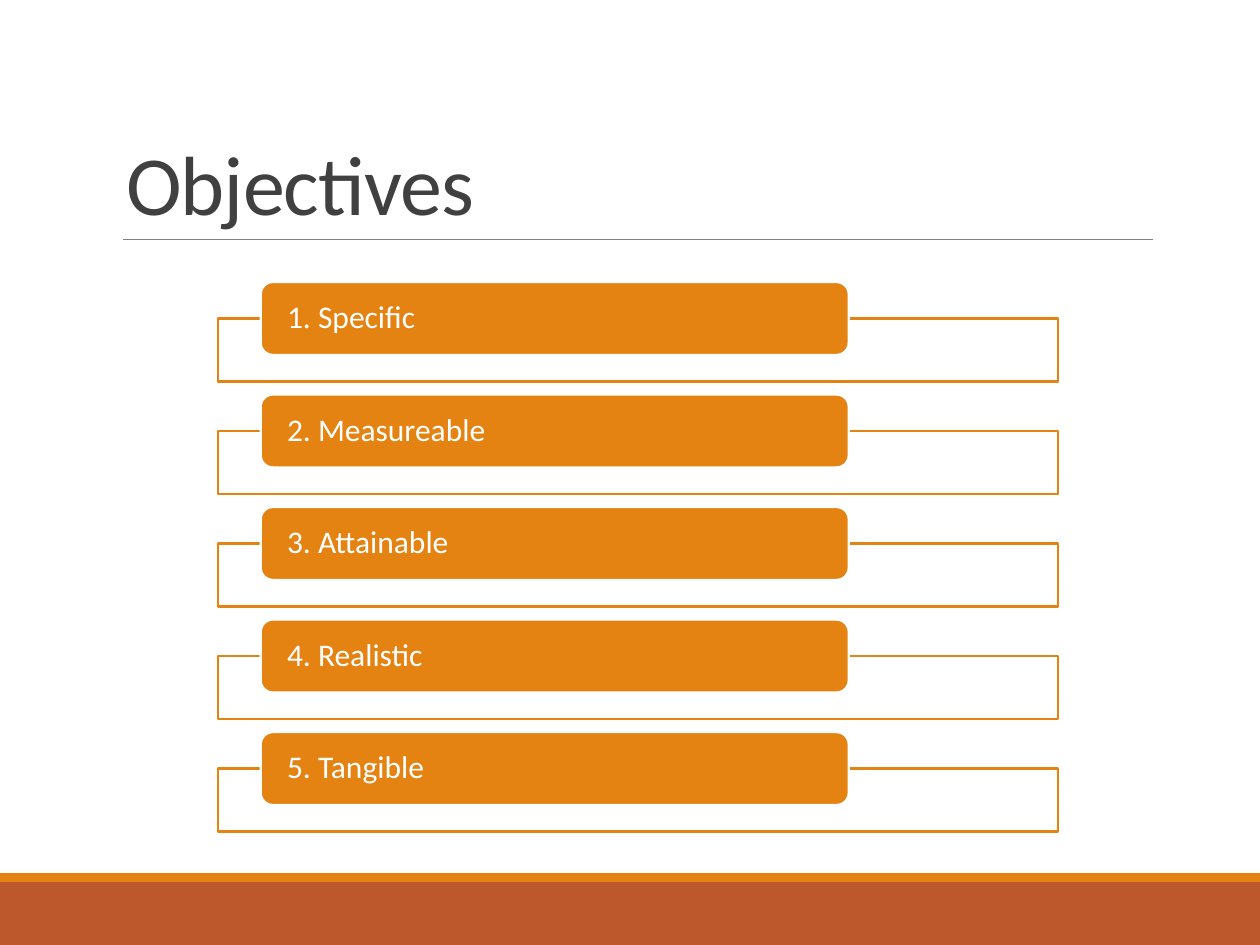
from dataclasses import dataclass

from lxml.etree import SubElement
from pptx import Presentation
from pptx.dml.color import RGBColor
from pptx.enum.shapes import MSO_CONNECTOR, MSO_SHAPE
from pptx.enum.text import MSO_ANCHOR, MSO_AUTO_SIZE, PP_ALIGN
from pptx.oxml.ns import qn
from pptx.shapes.autoshape import Shape
from pptx.slide import Slide
from pptx.text.text import TextFrame
from pptx.util import Pt

FONT = "Calibri"
ORANGE, RUST, WHITE = "E48312", "BD582C", "FFFFFF"
DARK_GRAY, RULE_GRAY = "404040", "808080"
ROW_PITCH = 64.3


@dataclass(frozen=True)
class Box:
    left: float
    top: float
    width: float
    height: float

    def moved_down(self, distance: float) -> "Box":
        return Box(self.left, self.top + distance, self.width, self.height)

    def lengths(self) -> tuple[Pt, Pt, Pt, Pt]:
        return Pt(self.left), Pt(self.top), Pt(self.width), Pt(self.height)


TITLE = Box(64.8, 22.6, 594, 114.2)
FRAME = Box(124.7, 182, 480, 36)
LABEL = Box(149, 161.2, 336, 41.6)
BANDS = ((Box(0, 504, 720, 36), RUST), (Box(0, 499, 720, 5), ORANGE))
OBJECTIVES = ("Specific", "Measureable", "Attainable", "Realistic", "Tangible")


def rgb(color: str) -> RGBColor:
    return RGBColor.from_string(color)


def add_block(slide: Slide, preset: MSO_SHAPE, box: Box, fill: str,
              outline: str | None = None) -> Shape:
    block = slide.shapes.add_shape(preset, *box.lengths())
    block.shadow.inherit = False
    block.fill.solid()
    block.fill.fore_color.rgb = rgb(fill)
    if outline:
        block.line.color.rgb = rgb(outline)
        block.line.width = Pt(1.25)
    else:
        block.line.fill.background()
    return block


def write(frame: TextFrame, text: str, size: float, color: str,
          anchor: MSO_ANCHOR, line_spacing: float) -> None:
    frame.text = text
    frame.word_wrap = True
    frame.auto_size = MSO_AUTO_SIZE.NONE
    frame.vertical_anchor = anchor
    paragraph = frame.paragraphs[0]
    paragraph.alignment = PP_ALIGN.LEFT
    paragraph.line_spacing = line_spacing
    font = paragraph.runs[0].font
    font.name, font.size, font.color.rgb = FONT, Pt(size), rgb(color)


def add_title(slide: Slide, text: str) -> None:
    title = slide.shapes.title
    title.left, title.top, title.width, title.height = TITLE.lengths()
    write(title.text_frame, text, 48, DARK_GRAY, MSO_ANCHOR.BOTTOM, 0.85)
    title.text_frame.paragraphs[0].runs[0].font._element.set("spc", "-50")


def add_title_rule(slide: Slide) -> None:
    rule = slide.shapes.add_connector(
        MSO_CONNECTOR.STRAIGHT, Pt(70.5), Pt(136.8), Pt(658.8), Pt(136.8))
    rule.line.color.rgb = rgb(RULE_GRAY)
    rule.line.width = Pt(0.5)
    SubElement(rule._element.spPr, qn("a:effectLst"))


def add_objective(slide: Slide, index: int, objective: str) -> None:
    offset = index * ROW_PITCH
    frame = add_block(slide, MSO_SHAPE.RECTANGLE, FRAME.moved_down(offset), WHITE, ORANGE)
    fill_color = frame._element.spPr.find(qn("a:solidFill"))[0]
    SubElement(fill_color, qn("a:alpha"), val="90000")

    label = add_block(slide, MSO_SHAPE.ROUNDED_RECTANGLE, LABEL.moved_down(offset), ORANGE, WHITE)
    label_text = label.text_frame
    label_text.margin_left = label_text.margin_right = Pt(13)
    label_text.margin_top = label_text.margin_bottom = Pt(0)
    write(label_text, f"{index + 1}. {objective}", 18, WHITE, MSO_ANCHOR.MIDDLE, 0.9)


def main() -> None:
    presentation = Presentation()
    presentation.slide_width, presentation.slide_height = Pt(720), Pt(540)
    slide = presentation.slides.add_slide(presentation.slide_layouts[5])
    for band, color in BANDS:
        add_block(slide, MSO_SHAPE.RECTANGLE, band, color)
    add_title_rule(slide)
    add_title(slide, "Objectives")
    for index, objective in enumerate(OBJECTIVES):
        add_objective(slide, index, objective)
    presentation.save("out.pptx")


if __name__ == "__main__":
    main()
